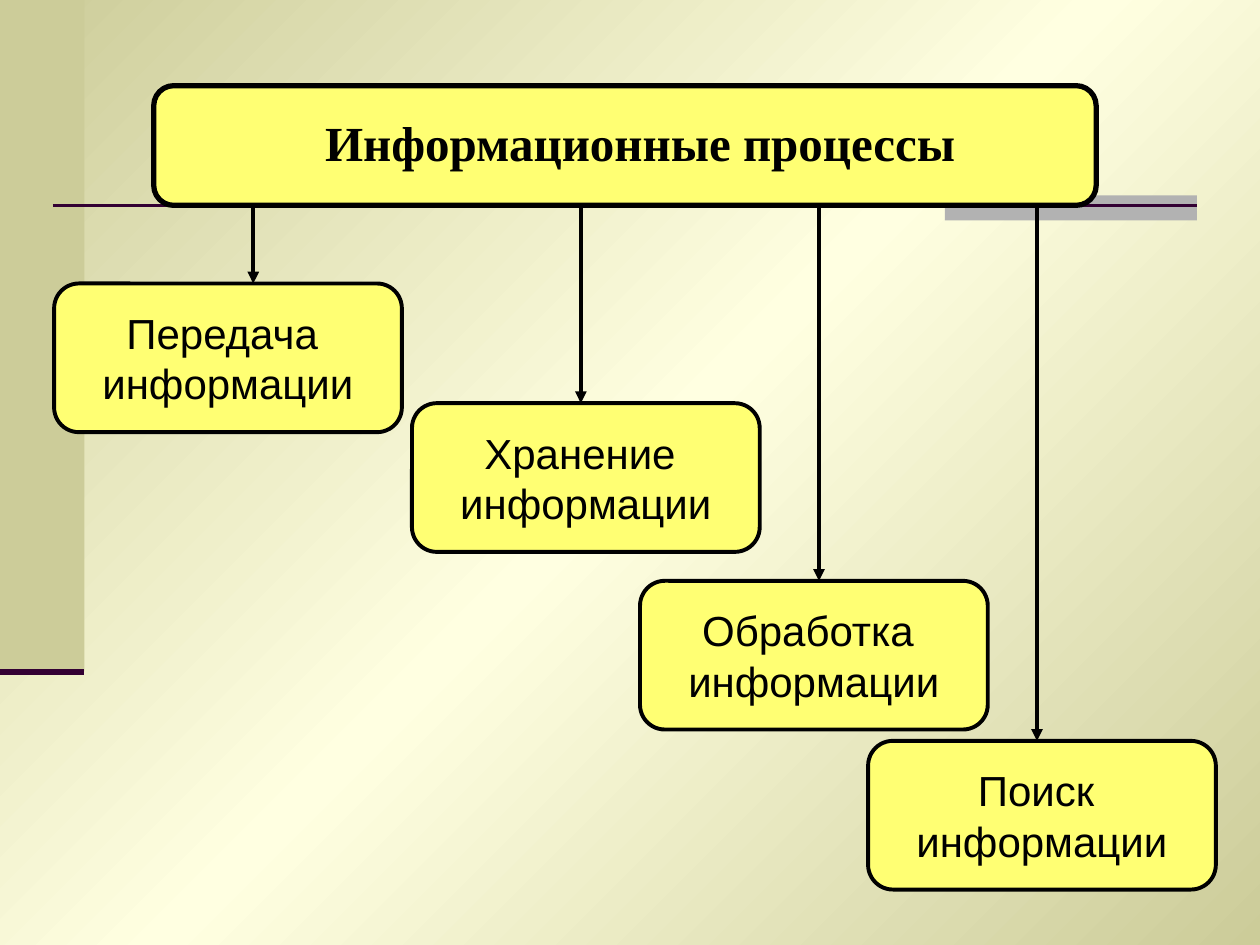
from copy import deepcopy

from pptx import Presentation
from pptx.dml.color import RGBColor
from pptx.enum.shapes import MSO_CONNECTOR, MSO_SHAPE
from pptx.enum.text import MSO_ANCHOR, PP_ALIGN
from pptx.oxml.ns import qn
from pptx.util import Inches, Pt
from lxml.etree import SubElement

TITLE = "Информационные процессы"
SECOND_LINE = "информации"
# first line, box left, box top, arrow x
PROCESSES = [
    ("Передача ", 0.43, 2.25, 2.01),
    ("Хранение ", 3.27, 3.2, 4.61),
    ("Обработка ", 5.08, 4.61, 6.5),
    ("Поиск ", 6.89, 5.88, 8.23),
]
BOX_W, BOX_H = 2.76, 1.18
HEADER = (1.22, 0.68, 7.48, 0.95)
HEADER_BOTTOM = HEADER[1] + HEADER[3]

THEME = {
    "olive": "CCCC99", "cream": "FFFFE1", "grey": "B2B2B2", "plum": "330033",
    "box": "FFFF73", "ink": "000000",
    "title_font": "Times New Roman", "title_size": 28,
    "body_font": "Arial", "body_size": 24,
}


def color(name):
    return RGBColor.from_string(THEME[name])


def add_box(s, kind, at, fill, line_width=None):
    sp = s.shapes.add_shape(kind, *map(Inches, at))
    sp.shadow.inherit = False
    sp.fill.solid()
    sp.fill.fore_color.rgb = color(fill)
    if line_width:
        sp.line.color.rgb = color("ink")
        sp.line.width = Pt(line_width)
    else:
        sp.line.fill.background()
    return sp


def add_line(s, x1, y1, x2, y2, ink, width, arrow=False):
    line = s.shapes.add_connector(MSO_CONNECTOR.STRAIGHT, *map(Inches, (x1, y1, x2, y2)))
    line.line.color.rgb = color(ink)
    line.line.width = Pt(width)
    if arrow:
        SubElement(line.line._get_or_add_ln(), qn("a:tailEnd"), type="triangle")
    SubElement(line._element.spPr, qn("a:effectLst"))


def add_text(p, text, style, bold=False):
    p.alignment = PP_ALIGN.CENTER
    r = p.add_run()
    r.text = text
    r.font.name = THEME[style + "_font"]
    r.font.size = Pt(THEME[style + "_size"])
    r.font.bold = bold
    r.font.color.rgb = color("ink")


def set_background(s):
    fill = s.background.fill
    fill.gradient()
    fill.gradient_angle = 315
    stops = s._element.find(".//" + qn("a:gsLst"))
    stops.insert(1, deepcopy(stops[0]))
    for stop, name, position in zip(fill.gradient_stops, ("olive", "cream", "olive"), (0, 0.5, 1)):
        stop.color.rgb = color(name)
        stop.position = position


def add_decoration(s):
    add_box(s, MSO_SHAPE.RECTANGLE, (0, 0, 0.67, 5.33), "olive")
    add_box(s, MSO_SHAPE.RECTANGLE, (7.5, 1.55, 2, 0.2), "grey")
    add_line(s, 0.42, 1.63, 9.5, 1.63, "plum", 1.5)
    add_line(s, 0, 5.33, 0.67, 5.33, "plum", 3.5)


def add_title(s):
    title = s.shapes.title
    title.left, title.top, title.width, title.height = map(Inches, (1.46, 0.84, 7.24, 0.57))
    tf = title.text_frame
    tf.word_wrap = True
    tf.vertical_anchor = MSO_ANCHOR.TOP
    add_text(tf.paragraphs[0], TITLE, "title", bold=True)
    s.shapes._spTree.append(title._element)  # in front of the header box


def add_process(s, name, left, top, arrow_x):
    sp = add_box(s, MSO_SHAPE.ROUNDED_RECTANGLE, (left, top, BOX_W, BOX_H), "box", 2.25)
    tf = sp.text_frame
    tf.word_wrap = False
    tf.vertical_anchor = MSO_ANCHOR.MIDDLE
    add_text(tf.paragraphs[0], name, "body")
    add_text(tf.add_paragraph(), SECOND_LINE, "body")
    add_line(s, arrow_x, HEADER_BOTTOM, arrow_x, top, "ink", 2.25, arrow=True)


def main():
    prs = Presentation()
    prs.slide_width, prs.slide_height = Inches(10), Inches(7.5)
    s = prs.slides.add_slide(prs.slide_layouts[5])
    set_background(s)
    add_decoration(s)
    add_box(s, MSO_SHAPE.ROUNDED_RECTANGLE, HEADER, "box", 3)
    for process in PROCESSES:
        add_process(s, *process)
    add_title(s)
    prs.save("out.pptx")


if __name__ == "__main__":
    main()
